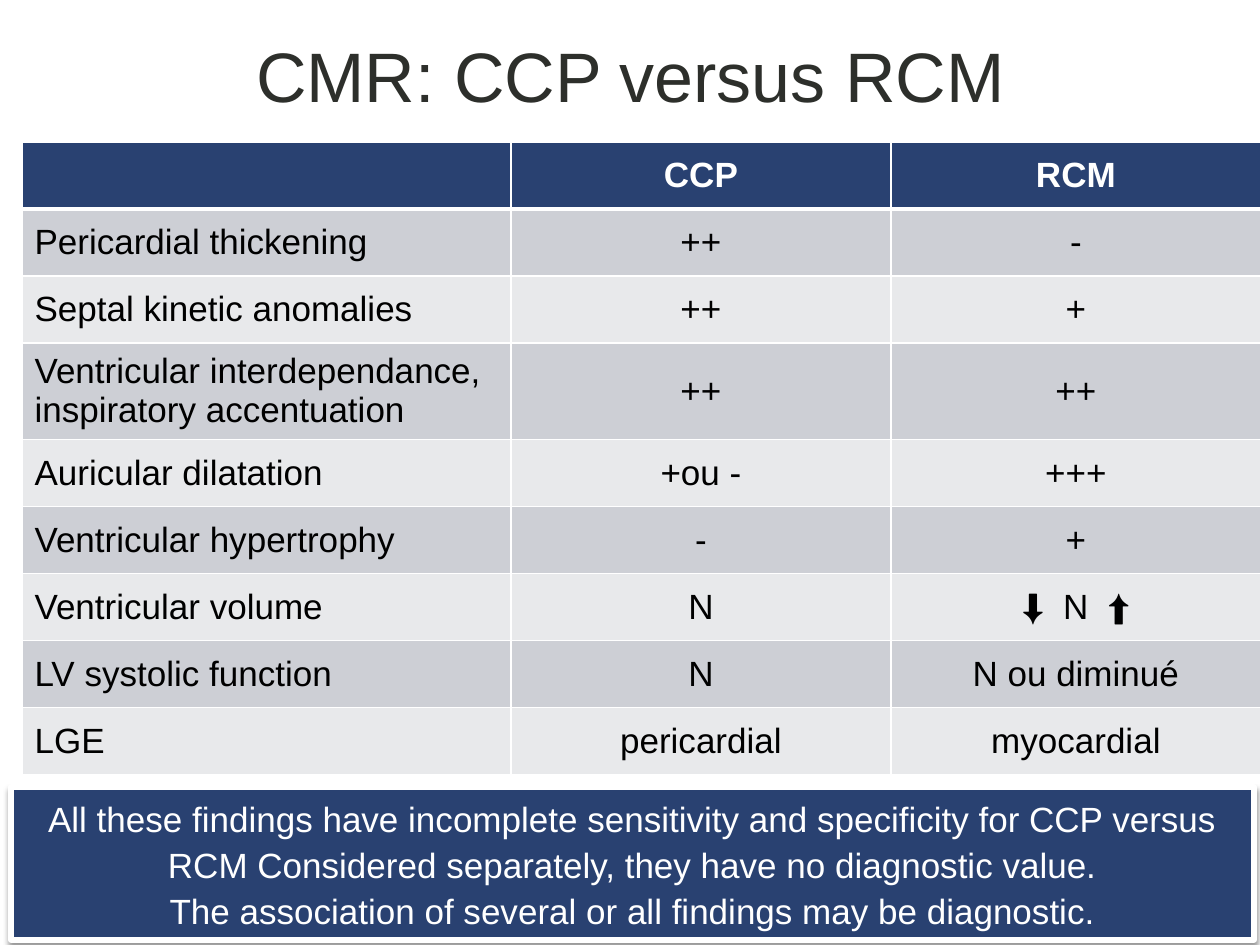
from lxml.etree import SubElement
from pptx import Presentation
from pptx.dml.color import RGBColor
from pptx.enum.shapes import MSO_SHAPE as Shape
from pptx.enum.text import MSO_ANCHOR as Anchor, MSO_AUTO_SIZE as AutoSize, PP_ALIGN as Align
from pptx.oxml import parse_xml
from pptx.oxml.ns import nsdecls, qn
from pptx.util import Pt

PX = 914400 // 126
FONT = "Arial"
WHITE = RGBColor(0xFF, 0xFF, 0xFF)
BLACK = RGBColor(0, 0, 0)
CHARCOAL = RGBColor(0x2D, 0x2F, 0x2B)
NAVY = RGBColor(0x29, 0x41, 0x71)
BANDS = (RGBColor(0xE8, 0xE9, 0xEB), RGBColor(0xCD, 0xCF, 0xD5))

TITLE = "CMR: CCP versus RCM"
FINDINGS = [
    ("", "CCP", "RCM"),
    ("Pericardial thickening", "++", "-"),
    ("Septal kinetic anomalies", "++", "+"),
    ("Ventricular interdependance, inspiratory accentuation", "++", "++"),
    ("Auricular dilatation", "+ou -", "+++"),
    ("Ventricular hypertrophy", "-", "+"),
    ("Ventricular volume", "N", "⬇  N  ⬆"),
    ("LV systolic function", "N", "N ou diminué"),
    ("LGE", "pericardial", "myocardial"),
]
CONCLUSIONS = [
    "All these findings have incomplete sensitivity and specificity for CCP versus RCM "
    "Considered separately, they have no diagnostic value.",
    "The association of several or all findings may be diagnostic.",
]
COLUMN_WIDTHS = (489, 380, 370)
ROW_HEIGHT, TALL_ROW_HEIGHT, TALL_ROW = 67, 81, 3


def px(*lengths):
    return [length * PX for length in lengths]


def write(para, text, size, color, align=Align.CENTER, bold=False):
    para.alignment = align
    span = para.add_run()
    span.text = text
    font = span.font
    font.name, font.size, font.bold = FONT, Pt(size), bold
    font.color.rgb = color


def add_borders(cell, row):
    widths = {"L": 1, "R": 1, "T": 3 if row == 1 else 1, "B": 3 if row == 0 else 1}
    properties = cell._tc.get_or_add_tcPr()
    for side, width in widths.items():
        line = SubElement(properties, qn(f"a:ln{side}"), w=str(Pt(width)))
        fill = SubElement(line, qn("a:solidFill"))
        SubElement(fill, qn("a:srgbClr"), val=str(WHITE))


def add_title(page):
    box = page.shapes.add_textbox(*px(95, 9, 1071, 132))
    frame = box.text_frame
    frame.word_wrap = True
    frame.vertical_anchor = Anchor.MIDDLE
    write(frame.paragraphs[0], TITLE, 40, CHARCOAL)


def add_findings(page):
    heights = [TALL_ROW_HEIGHT if row == TALL_ROW else ROW_HEIGHT for row in range(len(FINDINGS))]
    table = page.shapes.add_table(
        len(FINDINGS), len(COLUMN_WIDTHS), *px(22, 142, sum(COLUMN_WIDTHS), sum(heights))
    ).table
    for column, width in zip(table.columns, COLUMN_WIDTHS):
        column.width = width * PX
    for row, (texts, height) in enumerate(zip(FINDINGS, heights)):
        table.rows[row].height = height * PX
        header = row == 0
        for column, text in enumerate(texts):
            cell = table.cell(row, column)
            add_borders(cell, row)
            cell.fill.solid()
            cell.fill.fore_color.rgb = NAVY if header else BANDS[row % 2]
            cell.vertical_anchor = Anchor.MIDDLE
            if text:
                align = Align.CENTER if column else Align.LEFT
                write(cell.text_frame.paragraphs[0], text, 20, WHITE if header else BLACK, align, header)


def add_conclusion(page):
    box = page.shapes.add_shape(Shape.RECTANGLE, *px(11, 787, 1243, 153))
    box.fill.solid()
    box.fill.fore_color.rgb = NAVY
    box.line.color.rgb = WHITE
    box.line.width = Pt(3)
    box._element.spPr.append(parse_xml(
        f'<a:effectLst {nsdecls("a")}><a:outerShdw blurRad="{Pt(3.1)}" dist="{Pt(1.6)}" '
        'dir="5400000" rotWithShape="0"><a:srgbClr val="000000"><a:alpha val="38000"/>'
        '</a:srgbClr></a:outerShdw></a:effectLst>'
    ))
    frame = box.text_frame
    frame.word_wrap = True
    frame.auto_size = AutoSize.SHAPE_TO_FIT_TEXT
    frame.vertical_anchor = Anchor.TOP
    for index, text in enumerate(CONCLUSIONS):
        para = frame.add_paragraph() if index else frame.paragraphs[0]
        para.line_spacing = 1.1
        write(para, text, 20, WHITE)


def main():
    deck = Presentation()
    deck.slide_width, deck.slide_height = px(1260, 945)
    page = deck.slides.add_slide(deck.slide_layouts[6])
    add_title(page)
    add_findings(page)
    add_conclusion(page)
    deck.save("out.pptx")


if __name__ == "__main__":
    main()
